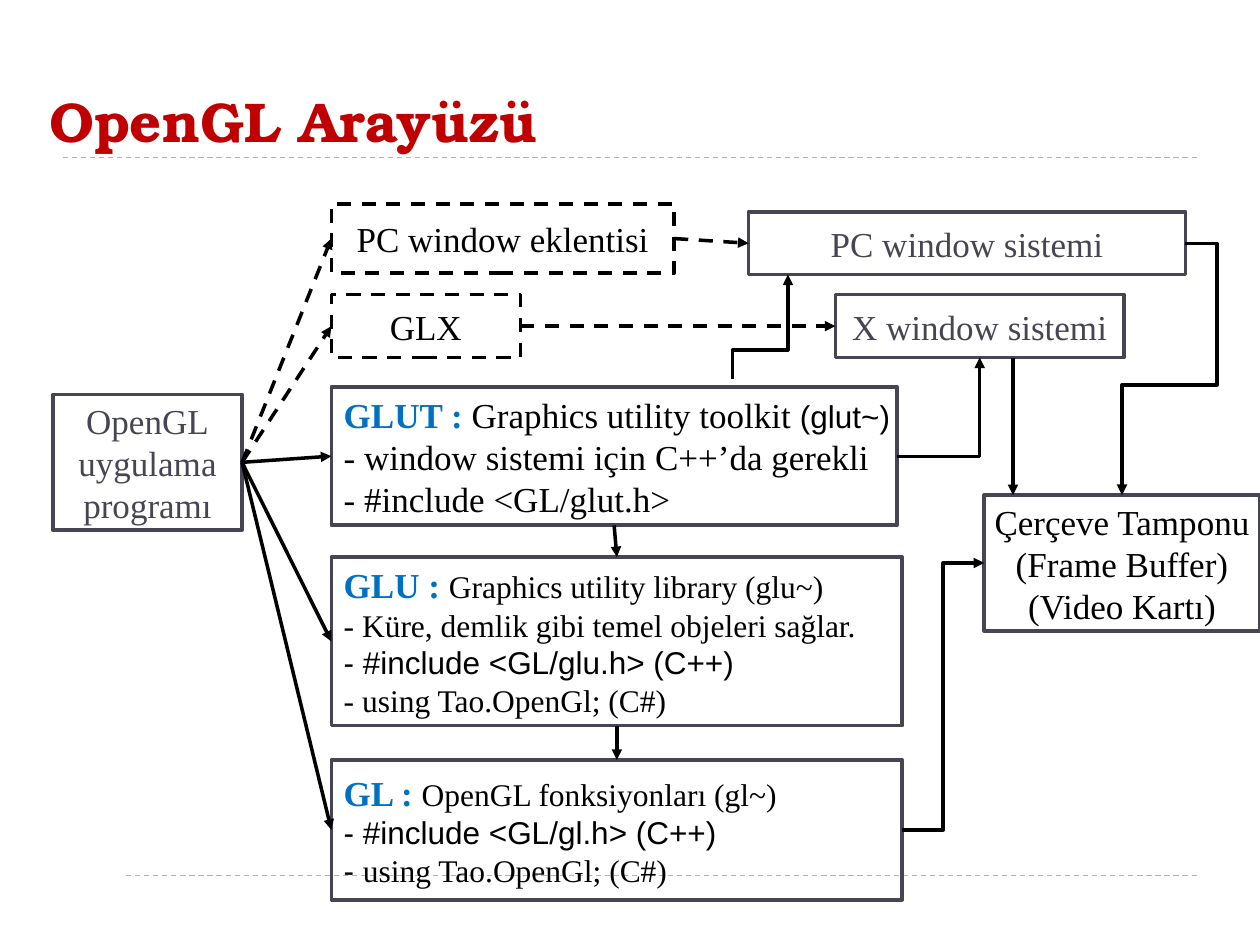
from dataclasses import dataclass
from typing import Optional

from lxml import etree
from pptx import Presentation
from pptx.dml.color import RGBColor
from pptx.enum import dml, shapes, text
from pptx.oxml.ns import qn
from pptx.util import Cm, Pt

HUE = {"red": "C00000", "blue": "0070C0", "slate": "464653",
       "black": "000000", "rule": "9FB8CD", "white": "FFFFFF"}
SERIF, SANS, HEAD = "Times New Roman", "Arial", "TeX Gyre Bonum"
TOP, LEFT, BASE, RIGHT = range(4)  # connection sites of a rectangle


@dataclass
class Run:
    text: str
    size: int = 18
    font: str = SERIF
    hue: str = "black"
    bold: bool = False


BREAK = Run("\n")


@dataclass
class Box:
    name: str
    at: tuple[float, float, float, float]
    rows: list[list[Run]]
    edge: str = "slate"
    dash: bool = False
    mid: bool = True
    wrap: bool = False


@dataclass
class Link:
    start: str
    out: int
    end: str
    into: int
    dash: bool = False


@dataclass
class Bend:
    start: tuple[float, float]
    end: tuple[float, float]
    kind: str
    adj: tuple[int, ...] = ()
    turn: int = 0


def rgb(hue: str) -> RGBColor:
    return RGBColor.from_string(HUE[hue])


def plain(lines: str, hue: str = "black") -> list[list[Run]]:
    return [[Run(line, 20, hue=hue)] for line in lines.split("\n")]


def key(word: str) -> Run:
    return Run(word, 20, hue="blue", bold=True)


def style(run, spec: Run) -> None:
    font = run.font
    font.size, font.name, font.bold = Pt(spec.size), spec.font, spec.bold
    font.color.rgb = rgb(spec.hue)


def draw_line(line, hue: str, width: float, dash: bool) -> None:
    line.color.rgb = rgb(hue)
    line.width = Pt(width)
    if dash:
        line.dash_style = dml.MSO_LINE.DASH


def draw_box(slide, box: Box):
    shape = slide.shapes.add_shape(shapes.MSO_SHAPE.RECTANGLE, *map(Cm, box.at))
    shape.shadow.inherit = False
    shape.fill.background()
    draw_line(shape.line, box.edge, 2, box.dash)
    frame = shape.text_frame
    frame.word_wrap = box.wrap
    frame.vertical_anchor = text.MSO_ANCHOR.MIDDLE
    for i, row in enumerate(box.rows):
        para = frame.add_paragraph() if i else frame.paragraphs[0]
        para.alignment = text.PP_ALIGN.CENTER if box.mid else text.PP_ALIGN.LEFT
        for part in row:
            if part is BREAK:
                para.add_line_break()
                continue
            run = para.add_run()
            run.text = part.text
            style(run, part)
    return shape


def draw_wire(slide, start=(0, 0), end=(0, 0), bent: bool = False,
              hue: str = "black", width: float = 2, dash: bool = False,
              head: bool = True):
    kind = shapes.MSO_CONNECTOR.ELBOW if bent else shapes.MSO_CONNECTOR.STRAIGHT
    wire = slide.shapes.add_connector(kind, *map(Cm, (*start, *end)))
    draw_line(wire.line, hue, width, dash)
    if head:
        etree.SubElement(wire.line._get_or_add_ln(), qn("a:tailEnd"), type="triangle")
    etree.SubElement(wire._element.spPr, qn("a:effectLst"))
    return wire


def draw_link(slide, link: Link, made: dict) -> None:
    wire = draw_wire(slide, dash=link.dash)
    wire.begin_connect(made[link.start], link.out)
    wire.end_connect(made[link.end], link.into)


def draw_bend(slide, bend: Bend) -> None:
    """Elbow connector with its own preset, adjustments and rotation."""
    props = draw_wire(slide, bend.start, bend.end, bent=True)._element.spPr
    if bend.turn:
        props.find(qn("a:xfrm")).set("rot", str(bend.turn * 60000))
    geom = props.find(qn("a:prstGeom"))
    geom.set("prst", bend.kind)
    guides = geom.find(qn("a:avLst"))
    for i, value in enumerate(bend.adj, 1):
        etree.SubElement(guides, qn("a:gd"), name=f"adj{i}", fmla=f"val {value}")


COL = 6.68
BOXES = [
    Box("glut", (COL, 7.8, 11.4, 2.79), [
        [key("GLUT : "), Run("Graphics utility toolkit ", 20), Run("(glut~)", font=SANS)],
        [Run("- window sistemi için C++’da gerekli", 20), BREAK,
         Run("- #include <GL/glut.h>", 20)]], mid=False),
    Box("glu", (COL, 11.23, 11.51, 3.4), [
        [key("GLU : "), Run("Graphics utility library (glu~)")],
        [Run("- Küre, demlik gibi temel objeleri sağlar."), BREAK,
         Run("- #include <GL/glu.h> (C++)", font=SANS)],
        [Run("- using Tao.OpenGl; (C#)")]], mid=False, wrap=True),
    Box("gl", (COL, 15.32, 11.51, 2.82), [
        [key("GL : "), Run("OpenGL fonksiyonları (gl~)"), BREAK,
         Run("- #include <GL/gl.h> (C++)", font=SANS)],
        [Run("- ", font=SANS), Run("using Tao.OpenGl; (C#)")]], mid=False),
    Box("glx", (COL, 5.94, 3.81, 1.27), plain("GLX"), "black", True),
    Box("ext", (COL, 4.11, 6.91, 1.4), plain("PC window eklentisi"), "black", True),
    Box("xwin", (16.84, 5.94, 5.82, 1.27), plain("X window sistemi", "slate")),
    Box("pcwin", (15.09, 4.27, 8.81, 1.27), plain("PC window sistemi", "slate")),
    Box("buffer", (19.84, 9.98, 5.56, 2.74),
        plain("Çerçeve Tamponu\n(Frame Buffer)\n(Video Kartı)")),
    Box("app", (1.07, 7.95, 3.81, 2.74), plain("OpenGL\nuygulama\nprogramı", "slate")),
]
LINKS = [Link("app", RIGHT, name, LEFT, name in ("glx", "ext"))
         for name in ("glut", "glu", "gl", "glx", "ext")] + [
    Link("glut", BASE, "glu", TOP),
    Link("glu", BASE, "gl", TOP),
    Link("glx", RIGHT, "xwin", LEFT, True),
    Link("ext", RIGHT, "pcwin", LEFT, True),
]
BENDS = [
    Bend((18.19, 16.73), (19.84, 11.35), "bentConnector3", (50000,)),
    Bend((23.9, 4.91), (22.62, 9.98), "bentConnector4", (-49700, 56200)),
    Bend((18.08, 9.2), (19.75, 7.21), "bentConnector2"),
    Bend((14.27, 6.03), (16.38, 7.15), "bentConnector3", (28100,), 270),
]


def main() -> None:
    deck = Presentation()
    deck.slide_width, deck.slide_height = Cm(25.4), Cm(19.05)
    slide = deck.slides.add_slide(deck.slide_layouts[5])

    for y in (17.65, 3.18):
        draw_wire(slide, (1.27, y), (24.13, y), hue="rule", width=0.75,
                  dash=True, head=False)
    patch = slide.shapes.add_shape(shapes.MSO_SHAPE.RECTANGLE,
                                   *map(Cm, (0.89, 17.32, 1.6, 1.6)))
    patch.shadow.inherit = False
    patch.fill.solid()
    patch.fill.fore_color.rgb = rgb("white")
    patch.line.fill.background()

    title = slide.shapes.title
    title.left, title.top, title.width, title.height = map(Cm, (0.74, 0.84, 23.83, 3.18))
    title.text_frame.text = "OpenGL Arayüzü"
    title.text_frame.vertical_anchor = text.MSO_ANCHOR.MIDDLE
    para = title.text_frame.paragraphs[0]
    para.alignment = text.PP_ALIGN.LEFT
    style(para.runs[0], Run("", 32, HEAD, "red", True))

    made = {box.name: draw_box(slide, box) for box in BOXES}
    for link in LINKS:
        draw_link(slide, link, made)
    draw_wire(slide, (20.42, 7.21), (20.42, 9.98))
    for bend in BENDS:
        draw_bend(slide, bend)
    deck.save("out.pptx")


if __name__ == "__main__":
    main()
